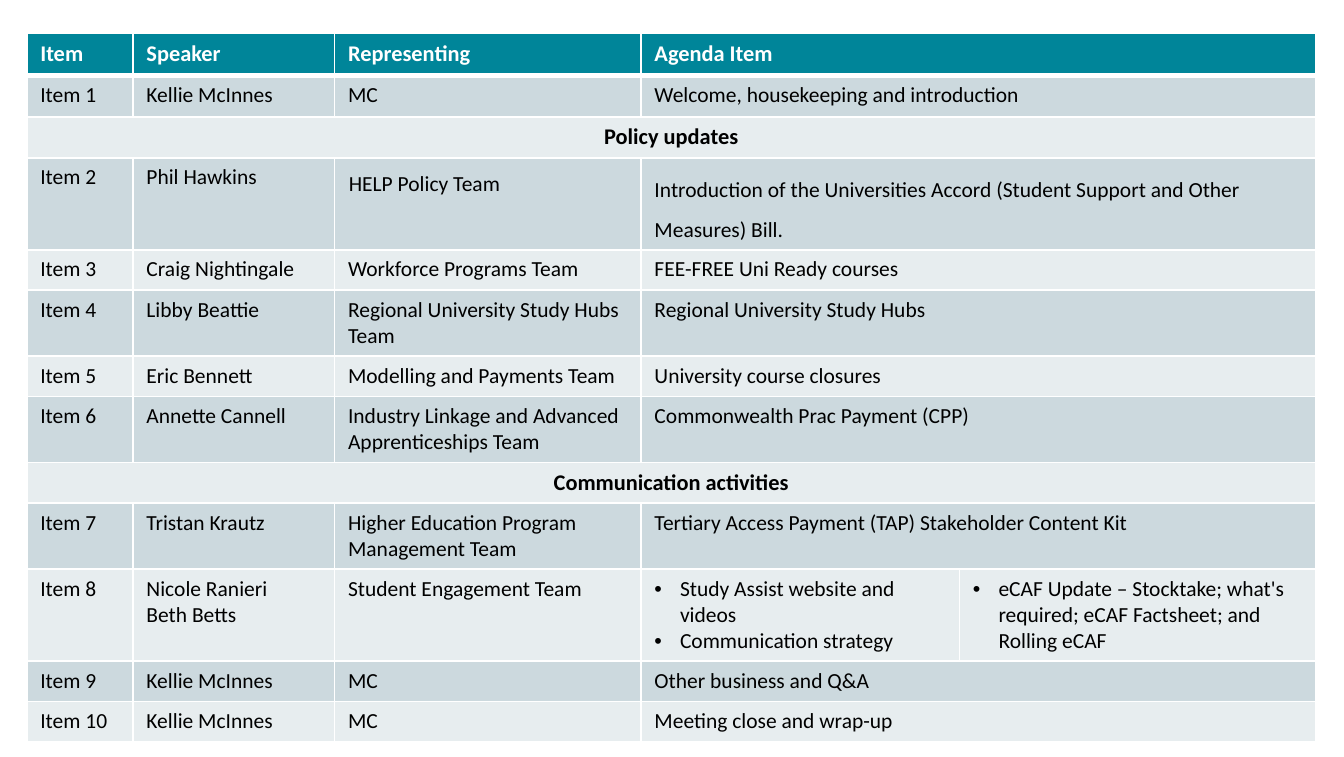
from lxml.etree import SubElement
from pptx import Presentation
from pptx.dml.color import RGBColor as RGB
from pptx.enum.text import PP_ALIGN as Align
from pptx.oxml.ns import qn
from pptx.util import Inches, Pt

COLORS = {"header": "008599", "dark": "CCD9DE", "light": "E7EDEF",
          "white": "FFFFFF", "black": "000000"}
COLUMN_WIDTHS = [0.79, 1.5, 2.28, 2.37, 2.65]
ROW_HEIGHTS = [0.31, 0.31, 0.3, 0.68, 0.3, 0.49, 0.3, 0.49, 0.3, 0.49, 0.68, 0.3, 0.3]
AGENDA = [
    ["Item", "Speaker", "Representing", "Agenda Item"],
    ["Item 1", "Kellie McInnes", "MC", "Welcome, housekeeping and introduction"],
    ["Policy updates"],
    ["Item 2", "Phil Hawkins", " HELP Policy Team",
     "Introduction of the Universities Accord (Student Support and Other Measures) Bill."],
    ["Item 3", "Craig Nightingale", "Workforce Programs Team", "FEE-FREE Uni Ready courses"],
    ["Item 4", "Libby Beattie", "Regional University Study Hubs Team",
     "Regional University Study Hubs"],
    ["Item 5", "Eric Bennett", "Modelling and Payments Team", "University course closures"],
    ["Item 6", "Annette Cannell", "Industry Linkage and Advanced Apprenticeships Team",
     "Commonwealth Prac Payment (CPP)"],
    ["Communication activities"],
    ["Item 7", "Tristan Krautz", "Higher Education Program Management Team",
     "Tertiary Access Payment (TAP) Stakeholder Content Kit"],
    ["Item 8", "Nicole Ranieri\nBeth Betts", "Student Engagement Team",
     "Study Assist website and videos\nCommunication strategy",
     "eCAF Update – Stocktake; what's required; eCAF Factsheet; and Rolling eCAF"],
    ["Item 9", "Kellie McInnes", "MC", "Other business and Q&A"],
    ["Item 10", "Kellie McInnes", "MC", "Meeting close and wrap-up"],
]
ACCORD_ROW = 3


class AgendaSlide:
    font = "Calibri"
    heading_size = Pt(12)
    body_size = Pt(11.5)

    def __init__(self, deck):
        self.slide = deck.slides.add_slide(deck.slide_layouts[6])

    def table(self, left, top, widths, heights):
        grid = self.slide.shapes.add_table(
            len(heights), len(widths), Inches(left), Inches(top),
            Inches(sum(widths)), Inches(sum(heights))).table
        for column, width in zip(grid.columns, widths):
            column.width = Inches(width)
        for row, height in zip(grid.rows, heights):
            row.height = Inches(height)
        return grid

    def cell_style(self, cell, fill, top=1, bottom=1):
        properties = cell._tc.get_or_add_tcPr()
        for side, points in (("L", 1), ("R", 1), ("T", top), ("B", bottom)):
            border = SubElement(properties, qn(f"a:ln{side}"), w=str(Pt(points)))
            paint = SubElement(border, qn("a:solidFill"))
            SubElement(paint, qn("a:srgbClr"), val=COLORS["white"])
        cell.fill.solid()
        cell.fill.fore_color.rgb = RGB.from_string(COLORS[fill])

    def cell_text(self, cell, text, color="black", heading=False, align=Align.LEFT,
                  bullets=False, spacing=None):
        frame = cell.text_frame
        for index, line in enumerate(text.split("\n")):
            paragraph = frame.add_paragraph() if index else frame.paragraphs[0]
            if bullets:
                self.bullet(paragraph)
            paragraph.alignment = align
            paragraph.line_spacing = spacing
            run = paragraph.add_run()
            run.text = line
            run.font.name = self.font
            run.font.size = self.heading_size if heading else self.body_size
            run.font.bold = heading
            run.font.color.rgb = RGB.from_string(COLORS[color])

    def bullet(self, paragraph):
        properties = paragraph._p.get_or_add_pPr()
        properties.set("marL", str(Inches(0.19)))
        properties.set("indent", str(Inches(-0.19)))
        SubElement(properties, qn("a:buFont"), typeface="Arial")
        SubElement(properties, qn("a:buChar"), char="•")


def main():
    deck = Presentation()
    deck.slide_width, deck.slide_height = Inches(10), Inches(5.63)
    page = AgendaSlide(deck)
    agenda = page.table(0.2, 0.25, COLUMN_WIDTHS, ROW_HEIGHTS)
    last = len(COLUMN_WIDTHS) - 1

    for row, entries in enumerate(AGENDA):
        header = row == 0
        section = len(entries) == 1
        fill = "header" if header else "dark" if row % 2 else "light"
        for column in range(last + 1):
            page.cell_style(agenda.cell(row, column), fill,
                            top=3 if row == 1 else 1, bottom=3 if header else 1)
        if len(entries) <= last:
            agenda.cell(row, len(entries) - 1).merge(agenda.cell(row, last))
        for column, text in enumerate(entries):
            page.cell_text(
                agenda.cell(row, column), text,
                color="white" if header else "black",
                heading=header or section,
                align=Align.CENTER if section else Align.LEFT,
                bullets=len(entries) > last and column >= 3,
                spacing=1.5 if row == ACCORD_ROW and column >= 2 else None)

    policy_team = agenda.cell(ACCORD_ROW, 2)
    policy_team.margin_left = policy_team.margin_right = Inches(0.07)
    policy_team.margin_top = policy_team.margin_bottom = 0
    deck.save("out.pptx")


if __name__ == "__main__":
    main()
